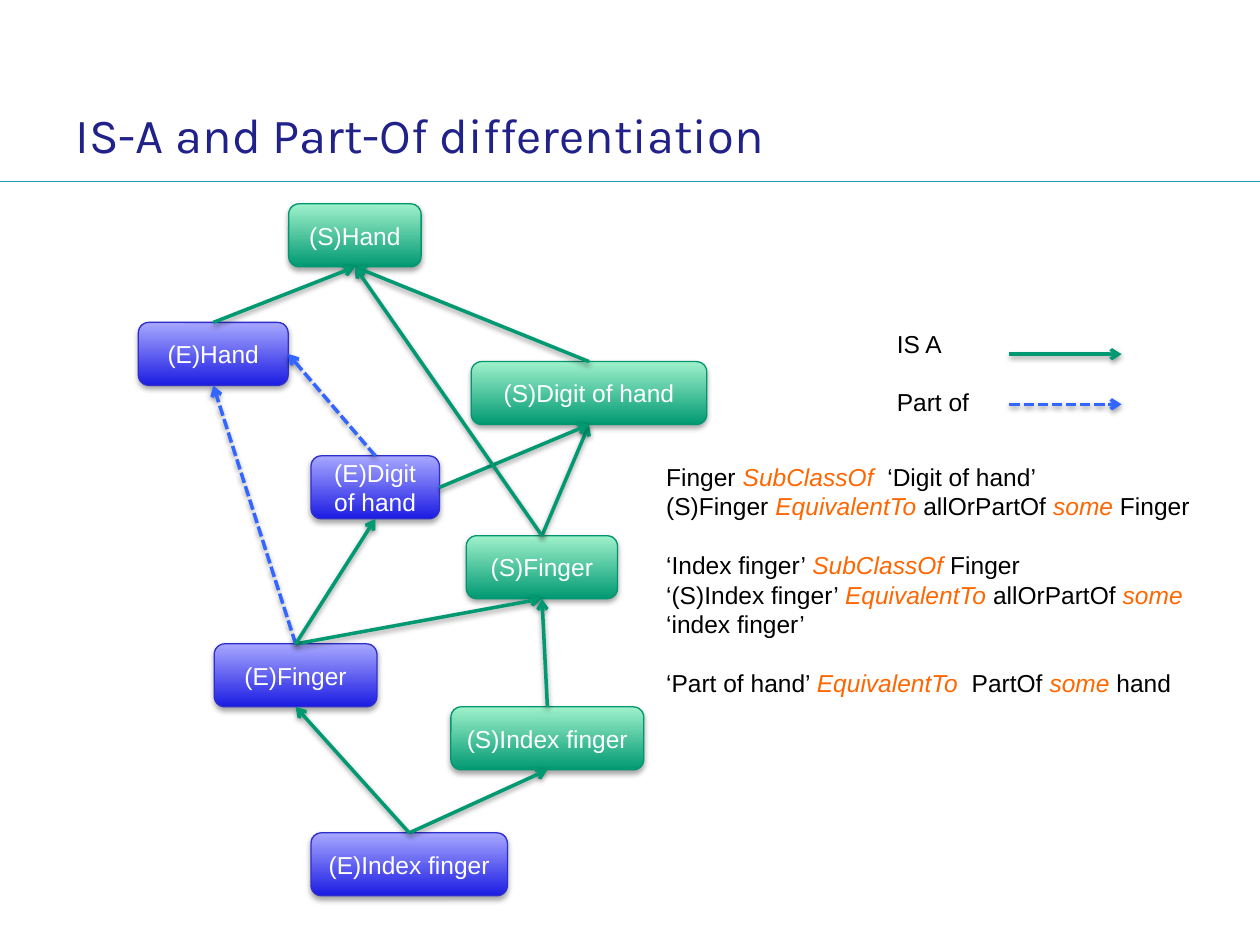
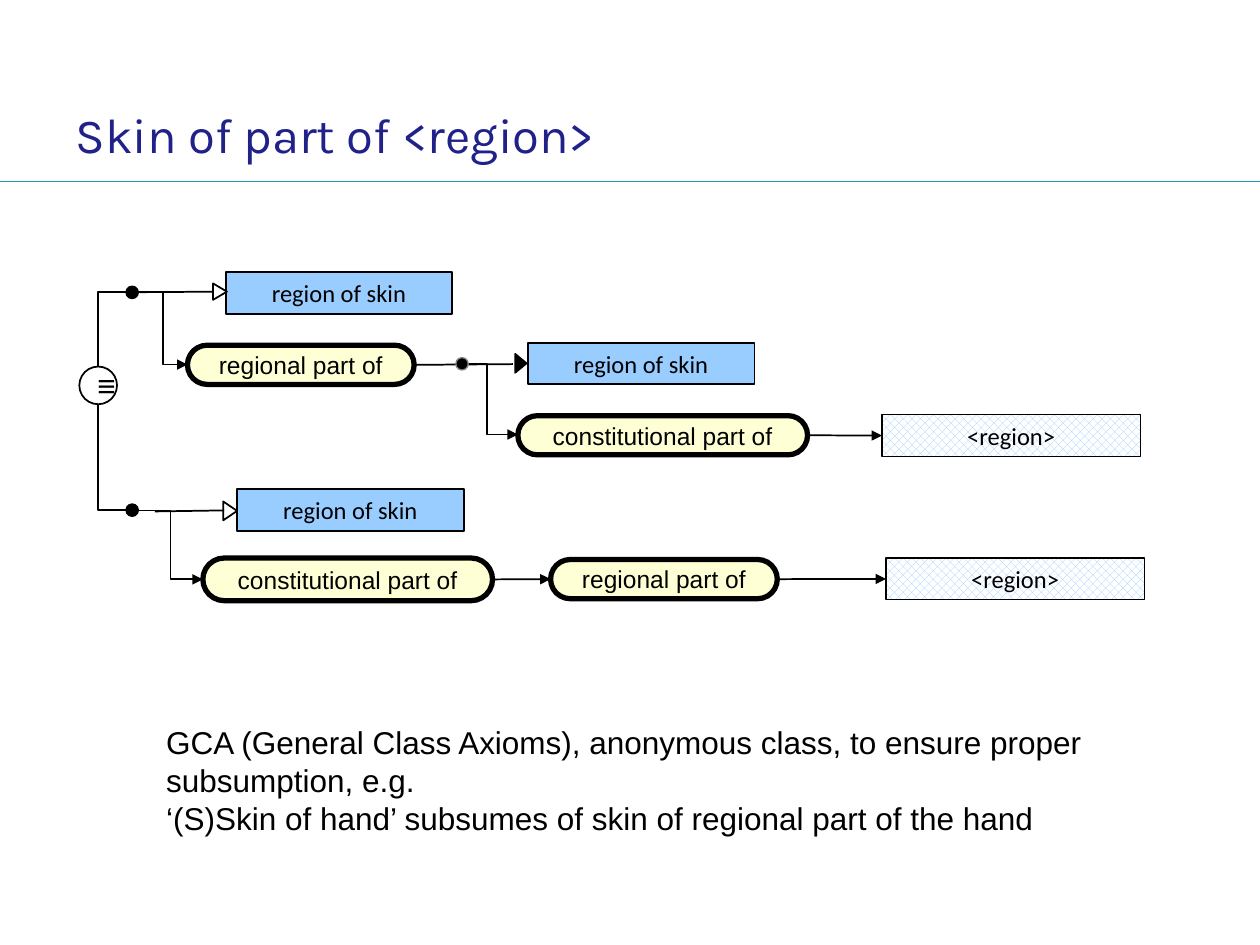
from lxml import etree
from pptx import Presentation
from pptx.dml.color import RGBColor
from pptx.enum.dml import MSO_LINE_DASH_STYLE as DASH, MSO_PATTERN_TYPE as PATTERN
from pptx.enum.shapes import MSO_AUTO_SHAPE_TYPE as SHAPE, MSO_CONNECTOR_TYPE as CONNECTOR
from pptx.enum.text import MSO_ANCHOR, MSO_AUTO_SIZE, PP_ALIGN
from pptx.oxml.ns import qn
from pptx.util import Cm, Pt

HEX = {
    "title": "21218A", "rule": "229BB8", "black": "000000", "white": "FFFFFF",
    "gray": "808080", "orange": "FF6600", "is_a": "009972", "part_of": "3366FF",
    "skin": "99CCFF", "relation": "FFFFD5",
    "entity_dark": "1C1CE3", "entity_light": "A7A7FF", "entity_edge": "2E2ECB",
    "structure_dark": "009972", "structure_light": "9FF1CB", "structure_edge": "00966F",
}
COLOR = {name: RGBColor.from_string(value) for name, value in HEX.items()}
TITLES = ["IS-A and Part-Of differentiation", "Skin of part of <region>"]


def add_box(slide, kind, frame, text="", font="Arial", ink="black", fill=None, edge="black", weight=1):
    shape = slide.shapes.add_shape(kind, *[Cm(length) for length in frame])
    if fill:
        shape.fill.solid()
        shape.fill.fore_color.rgb = COLOR[fill]
    else:
        shape.fill.background()
    shape.line.color.rgb = COLOR[edge]
    shape.line.width = Pt(weight)
    shape.shadow.inherit = False
    if text:
        text_frame = shape.text_frame
        text_frame.text = text
        text_frame.word_wrap = True
        text_frame.vertical_anchor = MSO_ANCHOR.MIDDLE
        paragraph = text_frame.paragraphs[0]
        paragraph.alignment = PP_ALIGN.CENTER
        paragraph.font.name = font
        paragraph.font.size = Pt(14)
        paragraph.font.color.rgb = COLOR[ink]
    return shape


def add_line(slide, points, color="black", weight=1, arrow=None, kind=CONNECTOR.STRAIGHT):
    connector = slide.shapes.add_connector(kind, *[Cm(length) for length in points])
    connector.line.color.rgb = COLOR[color]
    connector.line.width = Pt(weight)
    if color == "part_of":
        connector.line.dash_style = DASH.SQUARE_DOT
    if arrow:
        etree.SubElement(connector.line._get_or_add_ln(), qn("a:tailEnd"), type=arrow)
    etree.SubElement(connector._element.spPr, qn("a:effectLst"))
    return connector


presentation = Presentation()
presentation.slide_width = Cm(25.4)
presentation.slide_height = Cm(19.05)

slides = []
for title_text in TITLES:
    slide = presentation.slides.add_slide(presentation.slide_layouts[5])
    add_line(slide, (0, 3.66, 25.4, 3.66), "rule", 0.75)
    title = slide.shapes.title
    title.left, title.top, title.width, title.height = Cm(1.27), Cm(1.98), Cm(18.31), Cm(1.42)
    text_frame = title.text_frame
    text_frame.text = title_text
    text_frame.auto_size = MSO_AUTO_SIZE.NONE
    text_frame.vertical_anchor = MSO_ANCHOR.MIDDLE
    text_frame.margin_top = text_frame.margin_bottom = Cm(0.25)
    paragraph = text_frame.paragraphs[0]
    paragraph.alignment = PP_ALIGN.LEFT
    paragraph.font.name = "Karla"
    paragraph.font.size = Pt(28)
    paragraph.font.color.rgb = COLOR["title"]
    slides.append(slide)
hand_slide, skin_slide = slides

TOP, LEFT, BOTTOM, RIGHT = range(4)
TERMS = [
    ("(E)Hand", 2.79, 6.5, 3.02),
    ("(E)Finger", 4.32, 12.98, 3.28),
    ("(E)Index finger", 6.27, 16.79, 3.96),
    ("(E)Digit of hand", 6.27, 9.19, 2.59),
    ("(S)Hand", 5.82, 4.11, 2.67),
    ("(S)Finger", 9.4, 10.8, 3.05),
    ("(S)Index finger", 9.09, 14.25, 3.89),
    ("(S)Digit of hand", 9.5, 7.29, 4.75),
]
terms = {}
for name, left, top, width in TERMS:
    family = "entity" if name.startswith("(E)") else "structure"
    shape = add_box(hand_slide, SHAPE.ROUNDED_RECTANGLE, (left, top, width, 1.27), name,
                    ink="white", edge=f"{family}_edge", weight=0.75)
    shape.fill.gradient()
    shape.fill.gradient_angle = 90
    for stop, shade in zip(shape.fill.gradient_stops, ("dark", "light")):
        stop.color.rgb = COLOR[f"{family}_{shade}"]
    terms[name] = shape

RELATIONS = [
    ("(E)Hand", TOP, "(S)Hand", BOTTOM, "is_a"),
    ("(E)Finger", TOP, "(S)Finger", BOTTOM, "is_a"),
    ("(E)Index finger", TOP, "(S)Index finger", BOTTOM, "is_a"),
    ("(S)Index finger", TOP, "(S)Finger", BOTTOM, "is_a"),
    ("(E)Finger", TOP, "(E)Hand", BOTTOM, "part_of"),
    ("(E)Index finger", TOP, "(E)Finger", BOTTOM, "is_a"),
    ("(S)Finger", TOP, "(S)Digit of hand", BOTTOM, "is_a"),
    ("(E)Finger", TOP, "(E)Digit of hand", BOTTOM, "is_a"),
    ("(E)Digit of hand", RIGHT, "(S)Digit of hand", BOTTOM, "is_a"),
    ("(E)Digit of hand", TOP, "(E)Hand", RIGHT, "part_of"),
    ("(S)Digit of hand", TOP, "(S)Hand", BOTTOM, "is_a"),
    ("(S)Finger", TOP, "(S)Hand", BOTTOM, "is_a"),
]
arrows = []
for child, child_side, parent, parent_side, relation in RELATIONS:
    connector = add_line(hand_slide, (0, 0, 1, 1), relation, 2, "arrow")
    connector.begin_connect(terms[child], child_side)
    connector.end_connect(terms[parent], parent_side)
    arrows.append(connector)
for relation, y in [("is_a", 7.14), ("part_of", 8.15)]:
    arrows.append(add_line(hand_slide, (20.35, y, 22.61, y), relation, 2, "arrow"))

for shape in [*terms.values(), *arrows]:
    distance, opacity = (20000, 38000) if shape in arrows else (23000, 35000)
    effects = shape._element.spPr.find(qn("a:effectLst"))
    shadow = etree.SubElement(effects, qn("a:outerShdw"), blurRad="40000", dist=str(distance),
                              dir="5400000", rotWithShape="0")
    shade = etree.SubElement(shadow, qn("a:srgbClr"), val=HEX["black"])
    etree.SubElement(shade, qn("a:alpha"), val=str(opacity))

AXIOMS = [
    ("Finger *SubClassOf*  ‘Digit of hand’", 0),
    ("(S)Finger *EquivalentTo *allOrPartOf *some* Finger", 0),
    ("‘Index finger’ *SubClassOf* Finger", 16.8),
    ("‘(S)Index finger’ *EquivalentTo *allOrPartOf *some* ‘index finger’", 0),
    ("‘Part of hand’ *EquivalentTo  *PartOf *some* hand", 16.8),
]
CLASS_NOTE = [
    ("GCA (General Class Axioms), anonymous class, to ensure proper subsumption, e.g.", 0),
    ("‘(S)Skin of hand’ subsumes of skin of regional part of the hand", 0),
]
TEXTS = [
    (hand_slide, (13.18, 9.19, 11.68, 5.05), 14, AXIOMS),
    (hand_slide, (17.83, 6.5, 6.22, 2.06), 14, [("IS A", 0), ("Part of", 16.8)]),
    (skin_slide, (3.1, 14.45, 19.91, 2.57), 18, CLASS_NOTE),
]
for slide, frame, size, lines in TEXTS:
    text_frame = slide.shapes.add_textbox(*[Cm(length) for length in frame]).text_frame
    text_frame.word_wrap = True
    text_frame.auto_size = MSO_AUTO_SIZE.SHAPE_TO_FIT_TEXT
    for number, (line, gap) in enumerate(lines):
        paragraph = text_frame.add_paragraph() if number else text_frame.paragraphs[0]
        if gap:
            paragraph.space_before = Pt(gap)
        paragraph.font.name = "Arial"
        paragraph.font.size = Pt(size)
        paragraph.font.color.rgb = COLOR["black"]
        for position, words in enumerate(line.split("*")):
            run = paragraph.add_run()
            run.text = words
            if position % 2:
                run.font.italic = True
                run.font.color.rgb = COLOR["orange"]

PILLS = [
    ("regional part of", (3.78, 6.96, 4.57, 0.79)),
    ("constitutional part of", (10.44, 8.38, 5.84, 0.79)),
    ("constitutional part of", (4.09, 11.25, 5.84, 0.86)),
    ("regional part of", (11.1, 11.28, 4.57, 0.79)),
]
pills = []
for name, frame in PILLS:
    pill = add_box(skin_slide, SHAPE.ROUNDED_RECTANGLE, frame, name, fill="relation", weight=3)
    pill.adjustments[0] = 0.5
    pills.append(pill)
upper_regional, upper_constitutional, lower_constitutional, lower_regional = pills

skins = [add_box(skin_slide, SHAPE.RECTANGLE, (left, top, 4.57, 0.84), "region of skin",
                 "Calibri", fill="skin")
         for left, top in [(4.55, 5.49), (10.64, 6.91), (4.78, 9.86)]]
regions = [add_box(skin_slide, SHAPE.RECTANGLE, (left, top, 5.21, 0.84), "<region>",
                   "Calibri", weight=0.75)
           for left, top in [(17.78, 8.36), (17.86, 11.25)]]
for region in regions:
    region.fill.patterned()
    region.fill.pattern = PATTERN.PERCENT_50
    region.fill.fore_color.rgb = COLOR["skin"]
    region.fill.back_color.rgb = COLOR["white"]
for shape in skins + regions:
    text_frame = shape.text_frame
    text_frame.margin_left = text_frame.margin_right = Cm(0.18)
    text_frame.margin_top = text_frame.margin_bottom = Cm(0.08)

for source, target in [(upper_constitutional, regions[0]),
                       (lower_constitutional, lower_regional),
                       (lower_regional, regions[1])]:
    connector = add_line(skin_slide, (0, 0, 1, 1), arrow="triangle")
    connector.begin_connect(source, RIGHT)
    connector.end_connect(target, LEFT)
stem = add_line(skin_slide, (8.35, 7.35, 10.34, 7.34))
stem.begin_connect(upper_regional, RIGHT)
add_line(skin_slide, (2.82, 5.89, 4.29, 5.88))
add_line(skin_slide, (3.12, 10.31, 4.52, 10.29))

for left, top, edge in [(2.54, 5.77, "black"), (2.54, 10.16, "black"), (9.19, 7.21, "gray")]:
    add_box(skin_slide, SHAPE.OVAL, (left, top, 0.25, 0.25), fill="black", edge=edge, weight=0.75)
for frame, fill in [((4.27, 5.74, 0.33, 0.28), None),
                    ((10.31, 7.21, 0.38, 0.23), "black"),
                    ((4.45, 10.16, 0.38, 0.28), None)]:
    add_box(skin_slide, SHAPE.ISOSCELES_TRIANGLE, frame, fill=fill).rotation = 90

for points, bend in [((2.79, 5.89, 3.78, 7.35), 50000),
                     ((2.79, 10.29, 4.09, 11.68), 50000),
                     ((9.45, 7.34, 10.44, 8.76), 36500)]:
    elbow = add_line(skin_slide, points, arrow="triangle", kind=CONNECTOR.ELBOW)
    guides = elbow._element.spPr.find(qn("a:prstGeom")).find(qn("a:avLst"))
    etree.SubElement(guides, qn("a:gd"), name="adj1", fmla=f"val {bend}")

equivalence = add_box(skin_slide, SHAPE.OVAL, (1.6, 7.39, 0.76, 0.76), "≡", "Courier New", fill="white")
equivalence.text_frame.paragraphs[0].font.size = Pt(18)
for points in [(2.54, 5.89, 1.98, 7.39), (2.54, 10.29, 1.98, 8.15)]:
    corner = add_line(skin_slide, points, kind=CONNECTOR.ELBOW)
    corner._element.spPr.find(qn("a:prstGeom")).set("prst", "bentConnector2")

presentation.save("out.pptx")
